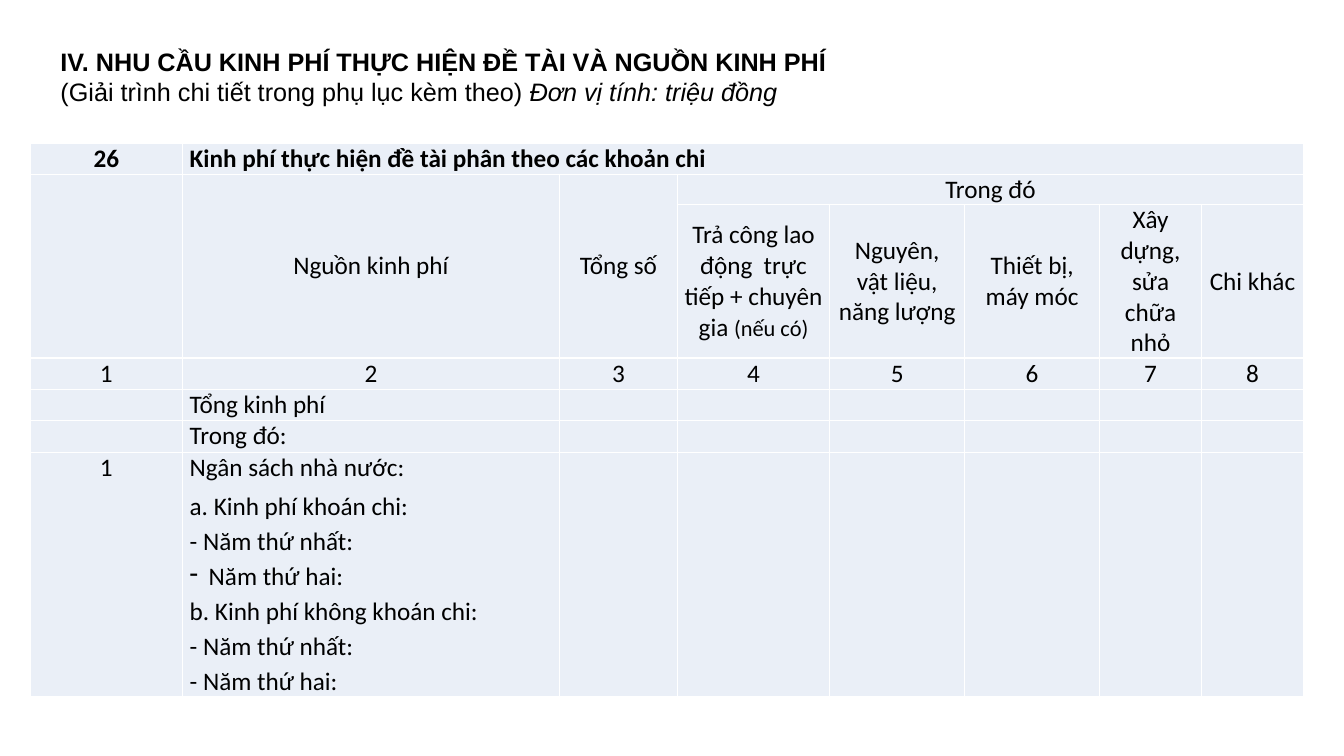
from dataclasses import dataclass

from lxml.etree import SubElement
from pptx import Presentation
from pptx.dml.color import RGBColor
from pptx.enum.text import MSO_ANCHOR, MSO_AUTO_SIZE, PP_ALIGN
from pptx.oxml import parse_xml
from pptx.oxml.ns import nsdecls, qn
from pptx.util import Cm, Pt


@dataclass(frozen=True)
class Theme:
    """Colours, fonts and type sizes of the slide."""
    ink: str = "000000"
    cell: str = "EAEFF7"
    grid: str = "FFFFFF"
    title_font: str = "Arial"
    table_font: str = "Calibri"
    text_size: int = 18
    note_size: int = 16
    gap: int = 3


class BudgetSlide:
    """A slide with a heading and a budget table."""

    def __init__(self, deck, theme):
        """Add a title-only slide to the deck."""
        self.theme = theme
        self.slide = deck.slides.add_slide(deck.slide_layouts[5])

    def run(self, paragraph, text, font, size=None, bold=False, italic=False):
        """Append one styled run."""
        run = paragraph.add_run()
        run.text = text
        run.font.name = font
        run.font.size = Pt(size or self.theme.text_size)
        run.font.bold, run.font.italic = bold, italic
        run.font.color.rgb = RGBColor.from_string(self.theme.ink)

    def title(self, heading, note, unit, left, top, width, height):
        """Fill the title placeholder with a heading and a line below it."""
        title = self.slide.shapes.title
        title.left, title.top, title.width, title.height = map(Cm, (left, top, width, height))
        frame = title.text_frame
        frame.word_wrap = True
        frame.auto_size = MSO_AUTO_SIZE.SHAPE_TO_FIT_TEXT
        frame.vertical_anchor = MSO_ANCHOR.TOP
        paragraph = frame.paragraphs[0]
        paragraph.alignment = PP_ALIGN.LEFT
        self.run(paragraph, heading, self.theme.title_font, bold=True)
        paragraph.add_line_break()
        self.run(paragraph, note, self.theme.title_font)
        self.run(paragraph, unit, self.theme.title_font, italic=True)

    def table(self, left, top, widths, heights):
        """Add an empty table with plain filled cells."""
        frame = self.slide.shapes.add_table(
            len(heights), len(widths), Cm(left), Cm(top), Cm(sum(widths)), Cm(sum(heights)))
        table = frame.table
        table.first_row = table.horz_banding = False
        for column, width in zip(table.columns, widths):
            column.width = Cm(width)
        for row, height in zip(table.rows, heights):
            row.height = Cm(height)
        for cell in table.iter_cells():
            self.style_cell(cell)
        return table

    def style_cell(self, cell):
        """Set the margins, fill and borders of a cell."""
        cell.margin_left = cell.margin_right = Cm(0.18)
        cell.margin_top = cell.margin_bottom = Cm(0)
        cell.fill.solid()
        cell.fill.fore_color.rgb = RGBColor.from_string(self.theme.cell)
        cell.text_frame.paragraphs[0].font.size = Pt(self.theme.text_size)
        properties = cell._tc.get_or_add_tcPr()
        for position, side in enumerate("LRTB"):
            properties.insert(position, parse_xml(
                f'<a:ln{side} {nsdecls("a")} w="{Pt(1)}"><a:solidFill>'
                f'<a:srgbClr val="{self.theme.grid}"/></a:solidFill></a:ln{side}>'))

    def label(self, cell, text, note="", bold=False):
        """Write a centred column heading with an optional smaller note."""
        cell.vertical_anchor = MSO_ANCHOR.MIDDLE
        paragraph = cell.text_frame.paragraphs[0]
        paragraph.alignment = PP_ALIGN.CENTER
        self.run(paragraph, text, self.theme.table_font, bold=bold)
        if note:
            self.run(paragraph, note, self.theme.table_font, self.theme.note_size)

    def entry(self, cell, text, centred=False, bold=False):
        """Write a spaced line at the top of a cell."""
        paragraph = cell.text_frame.paragraphs[0]
        paragraph.alignment = PP_ALIGN.CENTER if centred else PP_ALIGN.LEFT
        paragraph.space_before = paragraph.space_after = Pt(self.theme.gap)
        self.run(paragraph, text, self.theme.table_font, bold=bold)

    def breakdown(self, cell, lines, spaced, dashed):
        """Add lines to a cell, with one spaced above and one dash-bulleted."""
        for line in lines:
            paragraph = cell.text_frame.add_paragraph()
            paragraph.space_after = Pt(self.theme.gap)
            if line == spaced:
                paragraph.space_before = Pt(self.theme.gap)
            if line == dashed:
                properties = paragraph._p.get_or_add_pPr()
                properties.set("marL", str(Cm(0.48)))
                properties.set("indent", str(Cm(-0.48)))
                SubElement(properties, qn("a:buChar")).set("char", "-")
            self.run(paragraph, line, self.theme.table_font)


def main():
    """Build the slide and save it."""
    deck = Presentation()
    deck.slide_width, deck.slide_height = Cm(33.87), Cm(19.05)
    page = BudgetSlide(deck, Theme())
    page.title("IV. NHU CẦU KINH PHÍ THỰC HIỆN ĐỀ TÀI VÀ NGUỒN KINH PHÍ ",
               "(Giải trình chi tiết trong phụ lục kèm theo) ",
               "Đơn vị tính: triệu đồng", 1.27, 1.04, 30.94, 1.8)

    budget = page.table(0.76, 3.61, [3.84, 9.5, 2.97, 3.84, 3.4, 3.4, 2.57, 2.57],
                        [0.79, 0.76, 3.86, 0.79, 0.79, 0.79, 6.15])
    budget.cell(0, 1).merge(budget.cell(0, 7))
    budget.cell(1, 3).merge(budget.cell(1, 7))
    for column in range(3):
        budget.cell(1, column).merge(budget.cell(2, column))

    page.entry(budget.cell(0, 0), "26", centred=True, bold=True)
    page.entry(budget.cell(0, 1), "Kinh phí thực hiện đề tài phân theo các khoản chi", bold=True)

    for column, source in enumerate(["Nguồn kinh phí", "Tổng số", "Trong đó"], 1):
        page.label(budget.cell(1, column), source)
    expenses = [("Trả công lao động  trực tiếp + chuyên gia ", "(nếu có)"),
                ("Nguyên, vật liệu, năng lượng",), ("Thiết bị, máy móc",),
                ("Xây dựng, sửa chữa nhỏ",), ("Chi khác",)]
    for column, expense in enumerate(expenses, 3):
        page.label(budget.cell(2, column), *expense)

    for column in range(8):
        page.entry(budget.cell(3, column), str(column + 1), centred=True)
    for row, funding in enumerate(["Tổng kinh phí", "Trong đó:", "Ngân sách nhà nước:"], 4):
        page.entry(budget.cell(row, 1), funding)
    page.entry(budget.cell(6, 0), "1", centred=True)
    page.breakdown(budget.cell(6, 1),
                   ["a. Kinh phí khoán chi:", "- Năm thứ nhất:", "Năm thứ hai:",
                    "b. Kinh phí không khoán chi:", "- Năm thứ nhất:", "- Năm thứ hai:"],
                   spaced="a. Kinh phí khoán chi:", dashed="Năm thứ hai:")
    deck.save("out.pptx")


if __name__ == "__main__":
    main()
